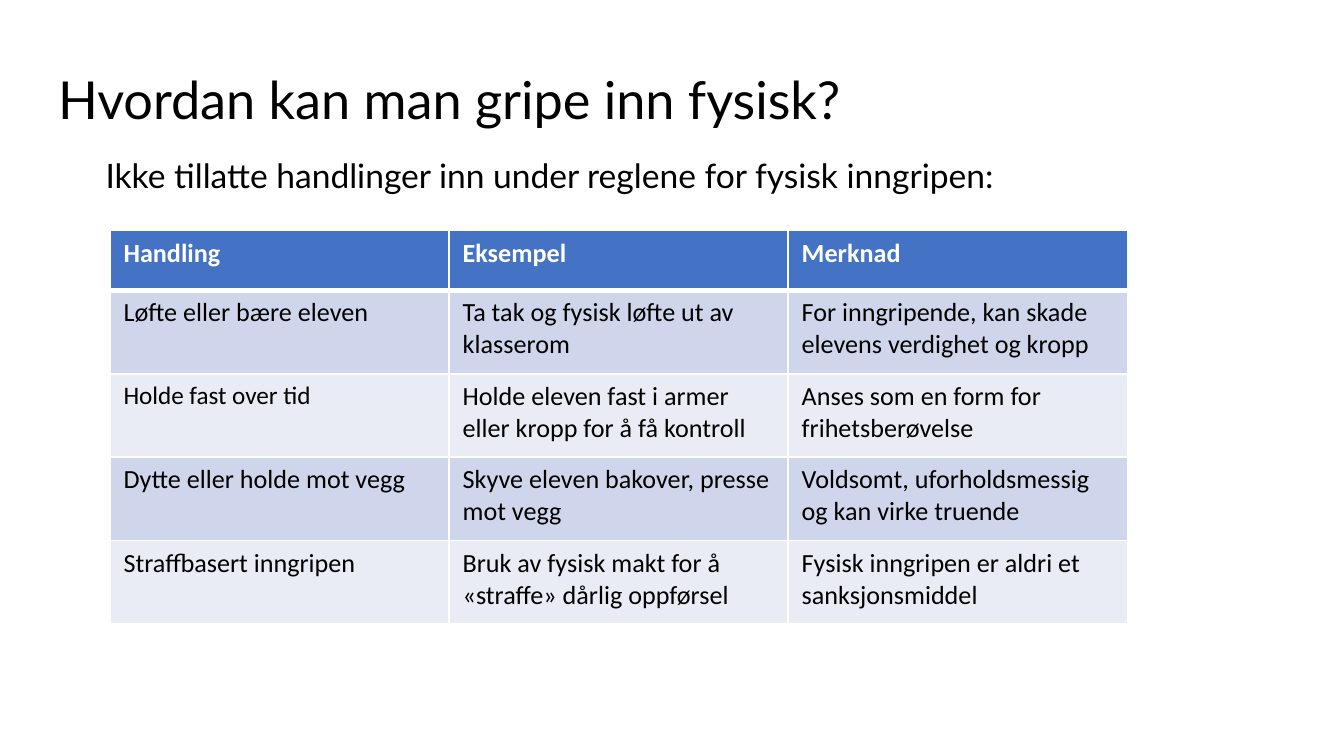
from dataclasses import dataclass
from lxml.etree import SubElement
from pptx import Presentation
from pptx.dml.color import RGBColor
from pptx.enum.text import MSO_ANCHOR
from pptx.oxml.ns import qn
from pptx.util import Pt


@dataclass(frozen=True)
class Theme:
    black: str = "000000"
    white: str = "FFFFFF"
    head: str = "4472C4"
    bands: tuple = ("CFD5EA", "E9EBF5")
    font: str = "Lato"
    grid: str = "Calibri"
    title: float = 28
    lead: float = 18
    cell: float = 14
    small: float = 13.5


THEME = Theme()
ROWS = [
    ("Handling", "Eksempel", "Merknad"),
    ("Løfte eller bære eleven", "Ta tak og fysisk løfte ut av klasserom",
     "For inngripende, kan skade elevens verdighet og kropp"),
    ("Holde fast over tid", "Holde eleven fast i armer eller kropp for å få kontroll",
     "Anses som en form for frihetsberøvelse"),
    ("Dytte eller holde mot vegg", "Skyve eleven bakover, presse mot vegg",
     "Voldsomt, uforholdsmessig og kan virke truende"),
    ("Straffbasert inngripen", "Bruk av fysisk makt for å «straffe» dårlig oppførsel",
     "Fysisk inngripen er aldri et sanksjonsmiddel"),
]


def style(part, form):
    for key, value in form.items():
        setattr(part, key, value)


def write(frame, text, color, form):
    para = frame.paragraphs[0]
    run = para.add_run()
    run.text = text
    style(run.font, form)
    run.font.color.rgb = RGBColor.from_string(color)
    return para


def add_text(slide, text, box, size, anchor):
    frame = slide.shapes.add_textbox(*map(Pt, box)).text_frame
    style(frame, {"word_wrap": True, "vertical_anchor": anchor})
    para = write(frame, text, THEME.black, {"name": THEME.font, "size": Pt(size)})
    para.line_spacing = 0.9


def add_edge(props, side, width):
    line = SubElement(props, qn(f"a:{side}"), w=str(Pt(width)))
    fill = SubElement(line, qn("a:solidFill"))
    SubElement(fill, qn("a:srgbClr"), val=THEME.white)


def fill_cell(cell, text, row, size):
    head = row == 0
    props = cell._tc.get_or_add_tcPr()
    for side in ("lnL", "lnR", "lnT", "lnB"):
        thick = (head and side == "lnB") or (row == 1 and side == "lnT")
        add_edge(props, side, 3 if thick else 1)
    cell.fill.solid()
    shade = THEME.head if head else THEME.bands[(row - 1) % 2]
    cell.fill.fore_color.rgb = RGBColor.from_string(shade)
    write(cell.text_frame, text, THEME.white if head else THEME.black,
          {"name": THEME.grid, "size": Pt(size), "bold": head})


def add_grid(slide, rows, box):
    table = slide.shapes.add_table(len(rows), len(rows[0]), *map(Pt, box)).table
    for col in table.columns:
        col.width = Pt(box[2] / len(rows[0]))
    for r, texts in enumerate(rows):
        table.rows[r].height = Pt(44.75 if r else 32)
        for c, text in enumerate(texts):
            size = THEME.small if (r, c) == (2, 0) else THEME.cell
            fill_cell(table.cell(r, c), text, r, size)


def main():
    deck = Presentation()
    style(deck, {"slide_width": Pt(720), "slide_height": Pt(405)})
    slide = deck.slides.add_slide(deck.slide_layouts[6])
    add_text(slide, "Hvordan kan man gripe inn fysisk?",
             (24, 29.5, 533.5, 51), THEME.title, MSO_ANCHOR.MIDDLE)
    add_text(slide, "Ikke tillatte handlinger inn under reglene for fysisk inngripen:",
             (49.5, 82, 620.5, 294.5), THEME.lead, MSO_ANCHOR.TOP)
    add_grid(slide, ROWS, (59, 123.5, 545, 211))
    deck.save("out.pptx")


if __name__ == "__main__":
    main()
